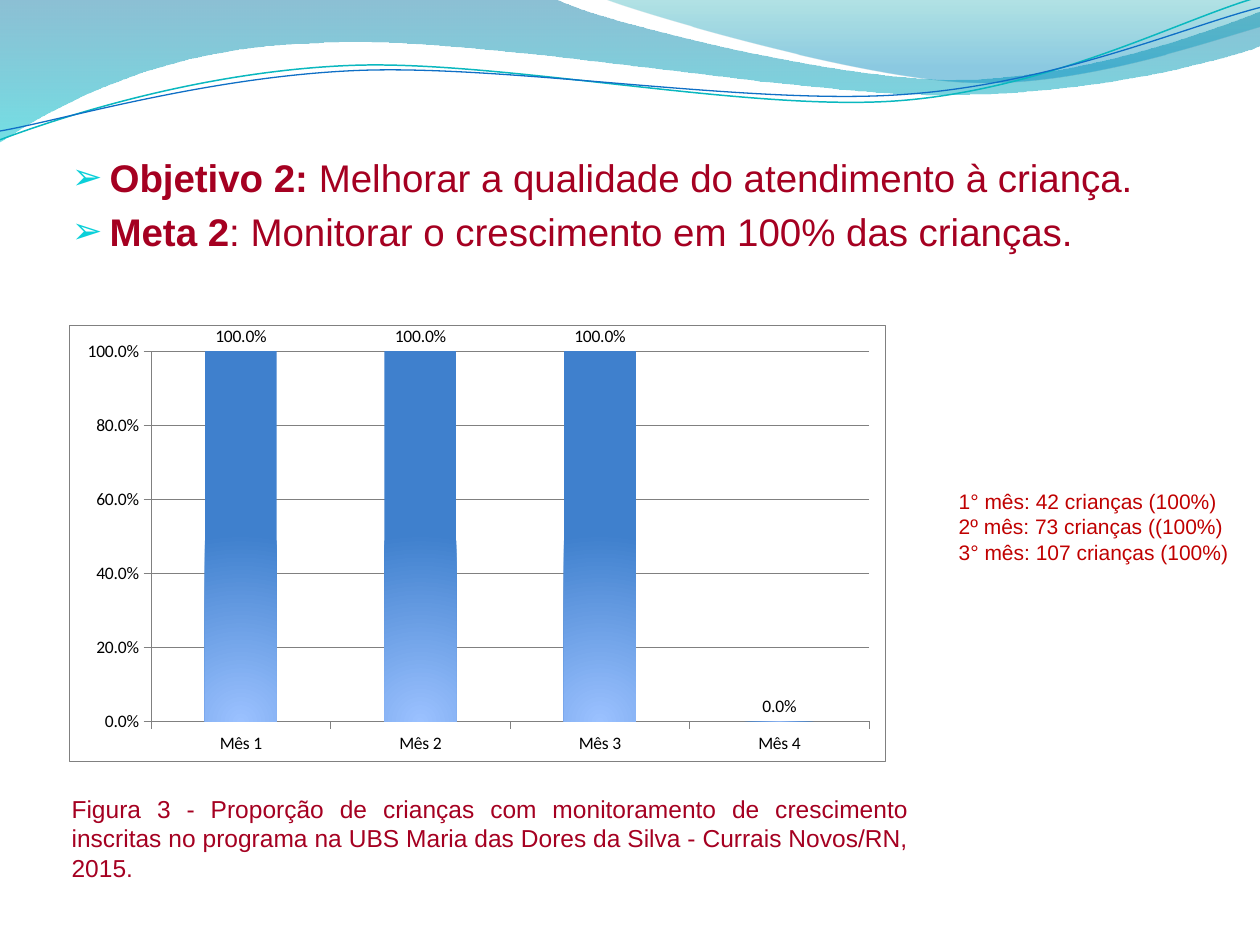
from dataclasses import dataclass
from math import cos, radians, sin

from lxml import etree
from pptx import Presentation
from pptx.chart.data import CategoryChartData
from pptx.dml.color import RGBColor
from pptx.enum.chart import XL_CHART_TYPE, XL_LABEL_POSITION, XL_TICK_MARK
from pptx.enum.text import MSO_ANCHOR, MSO_AUTO_SIZE, PP_ALIGN
from pptx.oxml import parse_xml
from pptx.oxml.ns import nsdecls, qn
from pptx.util import Inches, Pt


@dataclass(frozen=True)
class Theme:
    heading: str = "A50021"
    counts: str = "C00000"
    bullet: str = "0BD0D9"
    axis: str = "808080"
    chart_text: str = "000000"
    white: str = "FFFFFF"
    bar_bottom: str = "9BC1FF"
    bar_top: str = "3F80CD"
    wide_wave: tuple = ("0074A1", "00C6CF")
    right_wave: tuple = ("00A1A9", "008BBF")
    teal_line: str = "0AB8BF"
    blue_line: str = "0F6FC6"
    text_font: str = "Arial"
    chart_font: str = "Calibri"
    heading_size: float = 22
    caption_size: float = 14
    counts_size: float = 12
    chart_size: float = 10


theme = Theme()


def add_run(paragraph, text, size, color, bold=False):
    run = paragraph.add_run()
    run.text = text
    run.font.name = theme.text_font
    run.font.size = Pt(size)
    run.font.bold = bold
    run.font.color.rgb = RGBColor.from_string(color)
    paragraph.alignment = PP_ALIGN.JUSTIFY


def set_gradient(fill, colors, last_position=1):
    """Fill with two colours running from top to bottom."""
    fill.gradient()
    fill.gradient_angle = 270
    for stop, position, color in zip(fill.gradient_stops, (0, last_position), colors):
        stop.position = position
        stop.color.rgb = RGBColor.from_string(color)


prs = Presentation()
prs.slide_width, prs.slide_height = Inches(10), Inches(7.5)
slide = prs.slides.add_slide(prs.slide_layouts[1])
title, objectives = slide.placeholders
title.element.getparent().remove(title.element)

# Header waves: a pair is a straight step, six numbers are a cubic curve.
wide_wave = [
    (0, 0), (4.4, -0.01), (4.76, 0.17, 6.64, 0.63, 7.58, 0.63),
    (8.53, 0.63, 9.58, 0.26, 10, 0.09), (10.01, 0.36),
    (9.83, 0.44, 8.7, 0.76, 7.46, 0.75), (6.22, 0.75, 3.82, 0.28, 2.57, 0.34),
    (1.29, 0.36, 0.46, 0.83, -0.01, 1.13), (0, 0),
]
right_wave = [
    (4.79, -0.01), (5.09, 0.11, 6.82, 0.62, 7.69, 0.65),
    (8.56, 0.69, 9.61, 0.32, 10, 0.21), (10, 0), (4.79, -0.01),
]
teal_curve = [
    (0, 1.11), (0.48, 0.93, 1.58, 0.57, 2.77, 0.52),
    (3.95, 0.47, 5.93, 0.89, 7.13, 0.8), (8.33, 0.71, 9.38, 0.15, 9.98, -0.02),
]
blue_curve = [
    (0, 1.04), (0.47, 0.96, 1.64, 0.61, 2.83, 0.56),
    (4.03, 0.51, 5.97, 0.84, 7.17, 0.75), (8.36, 0.67, 9.41, 0.21, 10, 0.06),
]
# steps, gradient colours, last stop, opacities, line colour, line width
waves = [
    (wide_wave, theme.wide_wave, 1, (45, 55), None, 0),
    (right_wave, theme.right_wave, 0.8, (30, 45), None, 0),
    (teal_curve, None, 1, (), theme.teal_line, 0.85),
    (blue_curve, None, 1, (), theme.blue_line, 0.75),
]
for steps, colors, last_position, opacities, line_color, line_width in waves:
    outline = [(Inches(x), Inches(y)) for *_, x, y in steps]
    builder = slide.shapes.build_freeform(*outline[0])
    builder.add_line_segments(outline[1:], close=colors is not None)
    wave = builder.convert_to_shape()
    wave.shadow.inherit = False
    left, top = wave.left, wave.top
    segments = list(wave.element.iter(qn("a:lnTo")))
    for segment, step in zip(segments, steps[1:]):
        if len(step) == 6:
            curve = etree.Element(qn("a:cubicBezTo"))
            for x, y in zip(step[::2], step[1::2]):
                etree.SubElement(curve, qn("a:pt"), x=str(Inches(x) - left),
                                 y=str(Inches(y) - top))
            segment.getparent().replace(segment, curve)
    if colors:
        set_gradient(wave.fill, colors, last_position)
        wave.line.fill.background()
        for color, opacity in zip(wave.element.iter(qn("a:srgbClr")), opacities):
            etree.SubElement(color, qn("a:alpha"), val=str(opacity * 1000))
    else:
        wave.fill.background()
        wave.line.color.rgb = RGBColor.from_string(line_color)
        wave.line.width = Pt(line_width)
        # Hold the curve in a box tilted by 2.7 degrees.
        tilt = radians(2.7)
        center_x, center_y = left + wave.width / 2, top + wave.height / 2
        points = list(wave.element.iter(qn("a:pt")))
        turned = []
        for point in points:
            x = int(point.get("x")) + left - center_x
            y = int(point.get("y")) + top - center_y
            turned.append((x * cos(tilt) - y * sin(tilt), x * sin(tilt) + y * cos(tilt)))
        xs, ys = zip(*turned)
        width, height = round(max(xs) - min(xs)), round(max(ys) - min(ys))
        for point, (x, y) in zip(points, turned):
            point.set("x", str(round(x - min(xs))))
            point.set("y", str(round(y - min(ys))))
        outline_box = next(wave.element.iter(qn("a:path")))
        outline_box.set("w", str(width))
        outline_box.set("h", str(height))
        middle_x, middle_y = (max(xs) + min(xs)) / 2, (max(ys) + min(ys)) / 2
        center_x += middle_x * cos(tilt) + middle_y * sin(tilt)
        center_y += middle_y * cos(tilt) - middle_x * sin(tilt)
        wave.left, wave.top = round(center_x - width / 2), round(center_y - height / 2)
        wave.width, wave.height = width, height
        wave.rotation = 357.3

# Objective and goal, in front of the waves
slide.shapes._spTree.append(objectives.element)
objectives.left, objectives.top = Inches(0.47), Inches(1.17)
objectives.width, objectives.height = Inches(9.05), Inches(0.6)
objectives.text_frame.auto_size = MSO_AUTO_SIZE.NONE
objectives.text_frame.vertical_anchor = MSO_ANCHOR.TOP
headings = [
    ("Objetivo 2:", " Melhorar a qualidade do atendimento à criança. "),
    ("Meta 2", ": Monitorar o crescimento em 100% das crianças."),
]
for i, (label, statement) in enumerate(headings):
    frame = objectives.text_frame
    paragraph = frame.add_paragraph() if i else frame.paragraphs[0]
    add_run(paragraph, label, theme.heading_size, theme.heading, bold=True)
    add_run(paragraph, statement, theme.heading_size, theme.heading)
    paragraph.space_before = Pt(4.4)
    properties = paragraph._p.get_or_add_pPr()
    properties.set("marL", str(Inches(0.3)))
    properties.set("indent", str(Inches(-0.3)))
    bullet_color = etree.SubElement(properties, qn("a:buClr"))
    etree.SubElement(bullet_color, qn("a:srgbClr"), val=theme.bullet)
    etree.SubElement(properties, qn("a:buSzPct"), val="95000")
    etree.SubElement(properties, qn("a:buChar"), char="➢")

# Figure caption and monthly counts
caption = ["Figura 3 - Proporção de crianças com monitoramento de crescimento inscritas "
           "no programa na UBS Maria das Dores da Silva - Currais Novos/RN, 2015."]
monthly_counts = ["1° mês: 42 crianças (100%)", "2º mês: 73 crianças ((100%)",
                  "3° mês: 107 crianças (100%) "]
notes = [
    (caption, (0.47, 6.25, 6.84, 0.81), theme.caption_size, theme.heading, 0),
    (monthly_counts, (7.42, 3.83, 2.58, 0.71), theme.counts_size, theme.counts, 0.09),
]
for lines, place, size, color, indent in notes:
    frame = slide.shapes.add_textbox(*map(Inches, place)).text_frame
    frame.word_wrap = True
    frame.auto_size = MSO_AUTO_SIZE.SHAPE_TO_FIT_TEXT
    for i, line in enumerate(lines):
        paragraph = frame.add_paragraph() if i else frame.paragraphs[0]
        add_run(paragraph, line, size, color)
        paragraph._p.get_or_add_pPr().set("marL", str(Inches(indent)))

# Growth monitoring chart
growth = CategoryChartData(number_format="0.0%")
growth.categories = ["Mês 1", "Mês 2", "Mês 3", "Mês 4"]
growth.add_series("Series 1", (1, 1, 1, 0))
chart = slide.shapes.add_chart(
    XL_CHART_TYPE.COLUMN_CLUSTERED,
    Inches(0.55), Inches(2.58), Inches(6.48), Inches(3.46), growth,
).chart
chart.has_legend = chart.has_title = False
chart.font.name = theme.chart_font
chart.font.size = Pt(theme.chart_size)
chart.font.color.rgb = RGBColor.from_string(theme.chart_text)

months, share = chart.category_axis, chart.value_axis
share.maximum_scale, share.major_unit = 1, 0.2
share.tick_labels.number_format = "0.0%"
share.tick_labels.number_format_is_linked = False
months.major_tick_mark = share.major_tick_mark = XL_TICK_MARK.OUTSIDE
for ruled in (months, share, share.major_gridlines):
    ruled.format.line.color.rgb = RGBColor.from_string(theme.axis)
    ruled.format.line.width = Pt(0.25)

plot = chart.plots[0]
plot.gap_width = 150
plot.vary_by_categories = False
labels = plot.series[0].data_labels
labels.show_value = True
labels.number_format, labels.number_format_is_linked = "0.0%", False
labels.position = XL_LABEL_POSITION.OUTSIDE_END
set_gradient(plot.series[0].format.fill, (theme.bar_bottom, theme.bar_top))
linear = next(chart._chartSpace.iter(qn("a:lin")))
linear.getparent().replace(linear, parse_xml(
    f'<a:path {nsdecls("a")} path="circle">'
    '<a:fillToRect l="50000" t="100000" r="50000" b="0"/></a:path>'))

white_fill = f'<a:solidFill><a:srgbClr val="{theme.white}"/></a:solidFill>'
border = (f'<a:ln w="{Pt(0.25)}"><a:solidFill><a:srgbClr val="{theme.axis}"/>'
          '</a:solidFill></a:ln>')
chart_root = chart._chartSpace.find(qn("c:chart"))
chart_root.addnext(parse_xml(f'<c:spPr {nsdecls("c", "a")}>{white_fill}{border}</c:spPr>'))
plot_area = chart_root.find(qn("c:plotArea"))
plot_area.append(parse_xml(f'<c:spPr {nsdecls("c", "a")}>{white_fill}</c:spPr>'))
for automatic in plot_area.findall(qn("c:layout")):
    plot_area.remove(automatic)
layout = etree.Element(qn("c:layout"))
manual = etree.SubElement(layout, qn("c:manualLayout"))
for tag, value in [("layoutTarget", "inner"), ("xMode", "edge"), ("yMode", "edge"),
                   ("x", "0.1"), ("y", "0.06"), ("w", "0.88"), ("h", "0.85")]:
    etree.SubElement(manual, qn(f"c:{tag}"), val=value)
plot_area.insert(0, layout)

prs.save("out.pptx")
